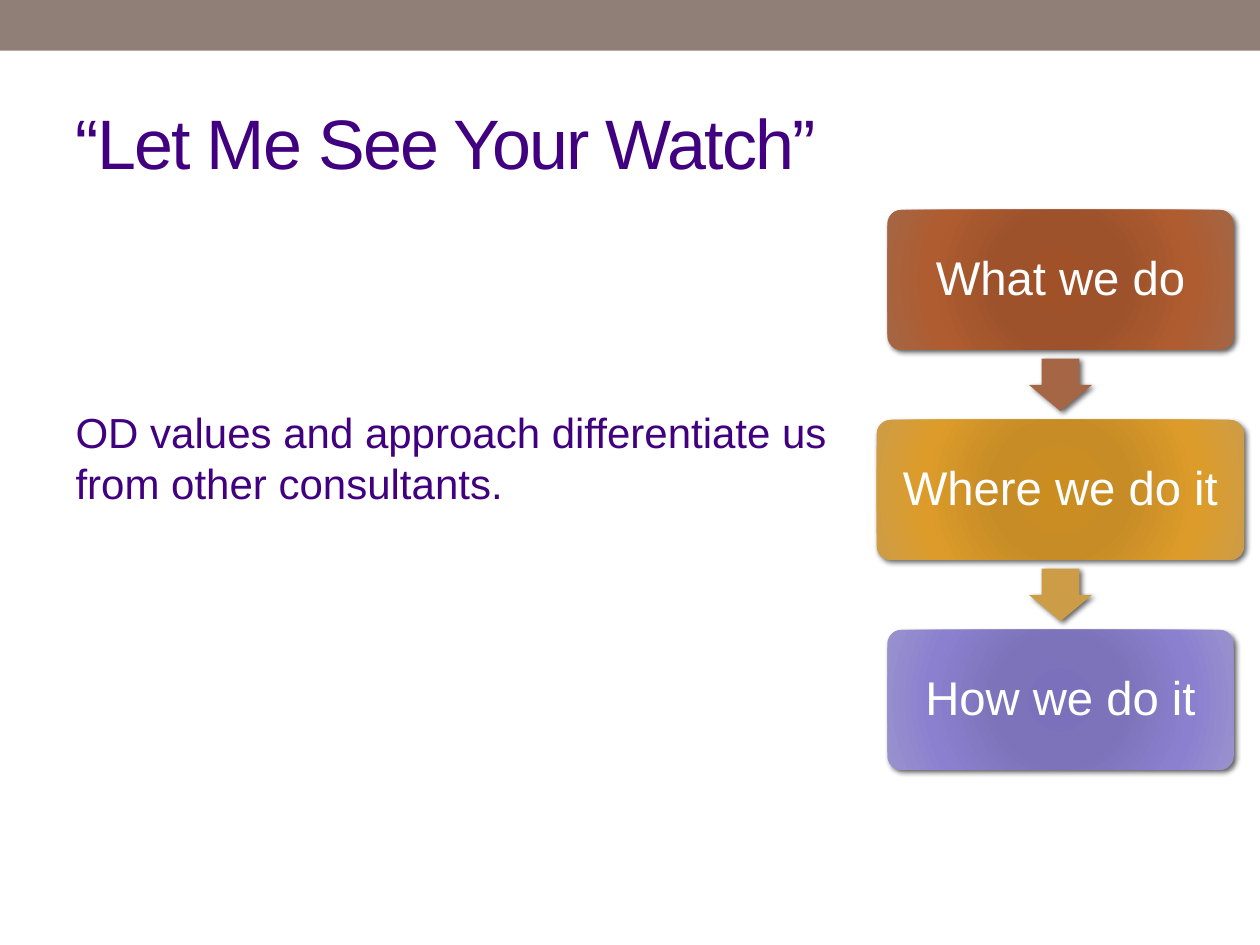
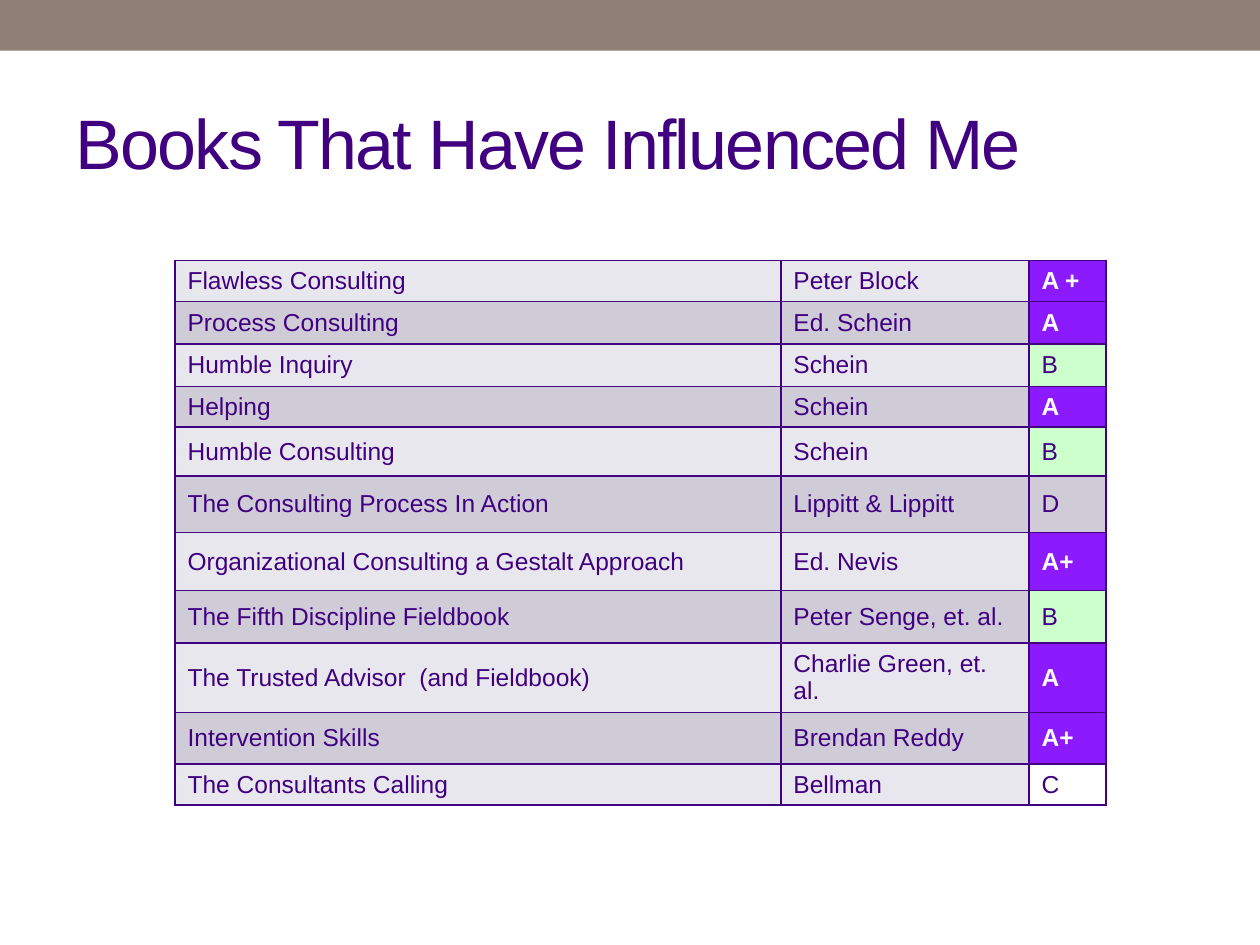
from lxml.etree import SubElement
from pptx import Presentation
from pptx.dml.color import RGBColor
from pptx.enum.shapes import MSO_SHAPE as Preset
from pptx.enum.text import MSO_ANCHOR as Anchor, MSO_AUTO_SIZE as AutoSize, PP_ALIGN as Align
from pptx.oxml import parse_xml
from pptx.oxml.ns import nsdecls, qn
from pptx.util import Pt

FONT = "Arial"
PURPLE, WHITE, BAND = "400080", "FFFFFF", "907F76"
ROW_FILLS = ("E8E7ED", "CFCCD8")
GRADE_FILLS = {"A": "8C1AFF", "B": "CCFFCC", "C": WHITE}

PAGE_WIDTH, PAGE_HEIGHT = 720, 540
BAND_HEIGHT = 29
TITLE_BOX = (36, 42, 648, 78)
BODY_BOX = (36, 126, 465, 384)
FLOW_BOX = (501, 120, 210, 320)
TABLE_BOX = (100, 149, 532, 314)

# Label, card width, gradient colours from the middle outwards
STEPS = [
    ("What we do", 198, ("A15127", "9D522B", "AF5C30", "A46645")),
    ("Where we do it", 210, ("CC8D20", "C78C26", "DD9C2A", "CD9C47")),
    ("How we do it", 198, ("7B70BC", "7D73BA", "8B80CF", "9A92CD")),
]
GRADIENT_STOPS = (0, 34, 70, 100)

COLUMN_WIDTHS = (346.2, 141.8, 44)
# Title, author, grade, row height
BOOKS = [
    ("Flawless Consulting", "Peter Block", "A +", 23.3),
    ("Process Consulting", "Ed. Schein", "A", 24.3),
    ("Humble Inquiry", "Schein", "B", 24.3),
    ("Helping", "Schein", "A", 23.3),
    ("Humble Consulting", "Schein", "B", 28),
    ("The Consulting Process In Action", "Lippitt & Lippitt", "D", 32.2),
    ("Organizational Consulting a Gestalt Approach", "Ed. Nevis", "A+", 33.2),
    ("The Fifth Discipline Fieldbook", "Peter Senge, et. al.", "B", 30),
    ("The Trusted Advisor  (and Fieldbook)", "Charlie Green, et. al.", "A", 39.6),
    ("Intervention Skills", "Brendan Reddy", "A+", 29.6),
    ("The Consultants Calling", "Bellman", "C", 23.3),
]


def rgb(color):
    return RGBColor.from_string(color)


def points(box):
    return [Pt(length) for length in box]


def set_font(para, size, color, bold=False):
    para.font.name = FONT
    para.font.size = Pt(size)
    para.font.bold = bold
    para.font.color.rgb = rgb(color)


def fill_placeholder(holder, box, text, size, anchor):
    holder.left, holder.top, holder.width, holder.height = points(box)
    frame = holder.text_frame
    frame.text = text
    frame.word_wrap = True
    frame.auto_size = AutoSize.NONE
    frame.vertical_anchor = anchor
    para = frame.paragraphs[0]
    para.alignment = Align.LEFT
    para.space_before = Pt(0)
    set_font(para, size, PURPLE)
    return frame


def add_filled_shape(page, preset, box, color):
    shape = page.shapes.add_shape(preset, *points(box))
    shape.shadow.inherit = False
    shape.fill.solid()
    shape.fill.fore_color.rgb = rgb(color)
    shape.line.fill.background()
    return shape


def add_page(deck, layout_name, title):
    """Add a slide with the top band and the shared title style."""
    page = deck.slides.add_slide(deck.slide_layouts.get_by_name(layout_name))
    add_filled_shape(page, Preset.RECTANGLE, (0, 0, PAGE_WIDTH, BAND_HEIGHT), BAND)
    frame = fill_placeholder(page.shapes.title, TITLE_BOX, title, 40, Anchor.MIDDLE)
    frame.paragraphs[0].runs[0].font._element.set("spc", "-100")
    return page


def add_statement(page, box, text):
    frame = fill_placeholder(page.placeholders[1], box, text, 24, Anchor.TOP)
    frame.margin_top = Pt(106.5)
    properties = frame.paragraphs[0]._p.get_or_add_pPr()
    properties.set("marL", "0")
    properties.set("indent", "0")
    SubElement(properties, qn("a:buNone"))


def drop_shadow(shape):
    effects = shape._element.spPr.find(qn("a:effectLst"))
    effects.append(parse_xml(
        f'<a:outerShdw {nsdecls("a")} blurRad="{Pt(3)}" dist="{Pt(2)}" dir="2700000"'
        ' algn="br" rotWithShape="0"><a:srgbClr val="000000"><a:alpha val="60000"/>'
        '</a:srgbClr></a:outerShdw>'))


def radial_fill(shape, colors):
    stops = "".join(
        f'<a:gs pos="{stop * 1000}"><a:srgbClr val="{color}"/></a:gs>'
        for stop, color in zip(GRADIENT_STOPS, colors))
    gradient = parse_xml(
        f'<a:gradFill {nsdecls("a")} rotWithShape="1"><a:gsLst>{stops}</a:gsLst>'
        '<a:path path="circle"><a:fillToRect l="100000" t="100000" r="100000"'
        ' b="100000"/></a:path></a:gradFill>')
    properties = shape._element.spPr
    properties.replace(properties.find(qn("a:solidFill")), gradient)


def add_card(page, box, label, colors):
    card = add_filled_shape(page, Preset.ROUNDED_RECTANGLE, box, colors[-1])
    card.adjustments[0] = 0.1
    radial_fill(card, colors)
    drop_shadow(card)
    frame = card.text_frame
    frame.text = label
    frame.word_wrap = True
    frame.vertical_anchor = Anchor.MIDDLE
    frame.margin_left = frame.margin_right = Pt(10)
    para = frame.paragraphs[0]
    para.alignment = Align.CENTER
    para.line_spacing = 0.9
    set_font(para, 27, WHITE)


def add_arrow(page, center, middle, color):
    length, breadth = 30, 36
    box = (center - length / 2, middle - breadth / 2, length, breadth)
    arrow = add_filled_shape(page, Preset.RIGHT_ARROW, box, color)
    arrow.rotation = 90
    arrow.adjustments[0] = 0.6
    arrow.adjustments[1] = 0.5
    drop_shadow(arrow)


def add_flow(page, box, steps):
    """Stack centred cards with an arrow in each gap, a gap being half a card."""
    left, top, width, height = box
    gap = height / (3 * len(steps) - 1)
    card_height = 2 * gap
    center = left + width / 2
    for index, (label, card_width, colors) in enumerate(steps):
        card_top = top + index * (card_height + gap)
        add_card(page, (center - card_width / 2, card_top, card_width, card_height),
                 label, colors)
        if index < len(steps) - 1:
            add_arrow(page, center, card_top + card_height + gap / 2, colors[-1])


def add_borders(cell, color):
    properties = cell._tc.get_or_add_tcPr()
    for side in ("lnL", "lnR", "lnT", "lnB"):
        properties.append(parse_xml(
            f'<a:{side} {nsdecls("a")} w="{Pt(1)}"><a:solidFill>'
            f'<a:srgbClr val="{color}"/></a:solidFill></a:{side}>'))


def format_cell(cell, text, fill, color, bold):
    cell.text = text
    cell.vertical_anchor = Anchor.MIDDLE
    add_borders(cell, PURPLE)
    cell.fill.solid()
    cell.fill.fore_color.rgb = rgb(fill)
    set_font(cell.text_frame.paragraphs[0], 14, color, bold)


def add_book_table(page, box, books):
    table = page.shapes.add_table(len(books), len(COLUMN_WIDTHS), *points(box)).table
    table.first_row = table.horz_banding = False
    for column, width in zip(table.columns, COLUMN_WIDTHS):
        column.width = Pt(width)
    for index, (title, author, grade, height) in enumerate(books):
        table.rows[index].height = Pt(height)
        row_fill = ROW_FILLS[index % 2]
        for column, text in enumerate((title, author)):
            format_cell(table.cell(index, column), text, row_fill, PURPLE, False)
        top_grade = grade.startswith("A")
        format_cell(table.cell(index, 2), grade, GRADE_FILLS.get(grade[0], row_fill),
                    WHITE if top_grade else PURPLE, top_grade)


def main():
    deck = Presentation()
    deck.slide_width, deck.slide_height = Pt(PAGE_WIDTH), Pt(PAGE_HEIGHT)

    page = add_page(deck, "Title and Content", "“Let Me See Your Watch”")
    add_statement(page, BODY_BOX,
                  "OD values and approach differentiate us from other consultants.")
    add_flow(page, FLOW_BOX, STEPS)

    page = add_page(deck, "Title Only", "Books That Have Influenced Me")
    add_book_table(page, TABLE_BOX, BOOKS)

    deck.save("out.pptx")


if __name__ == "__main__":
    main()
